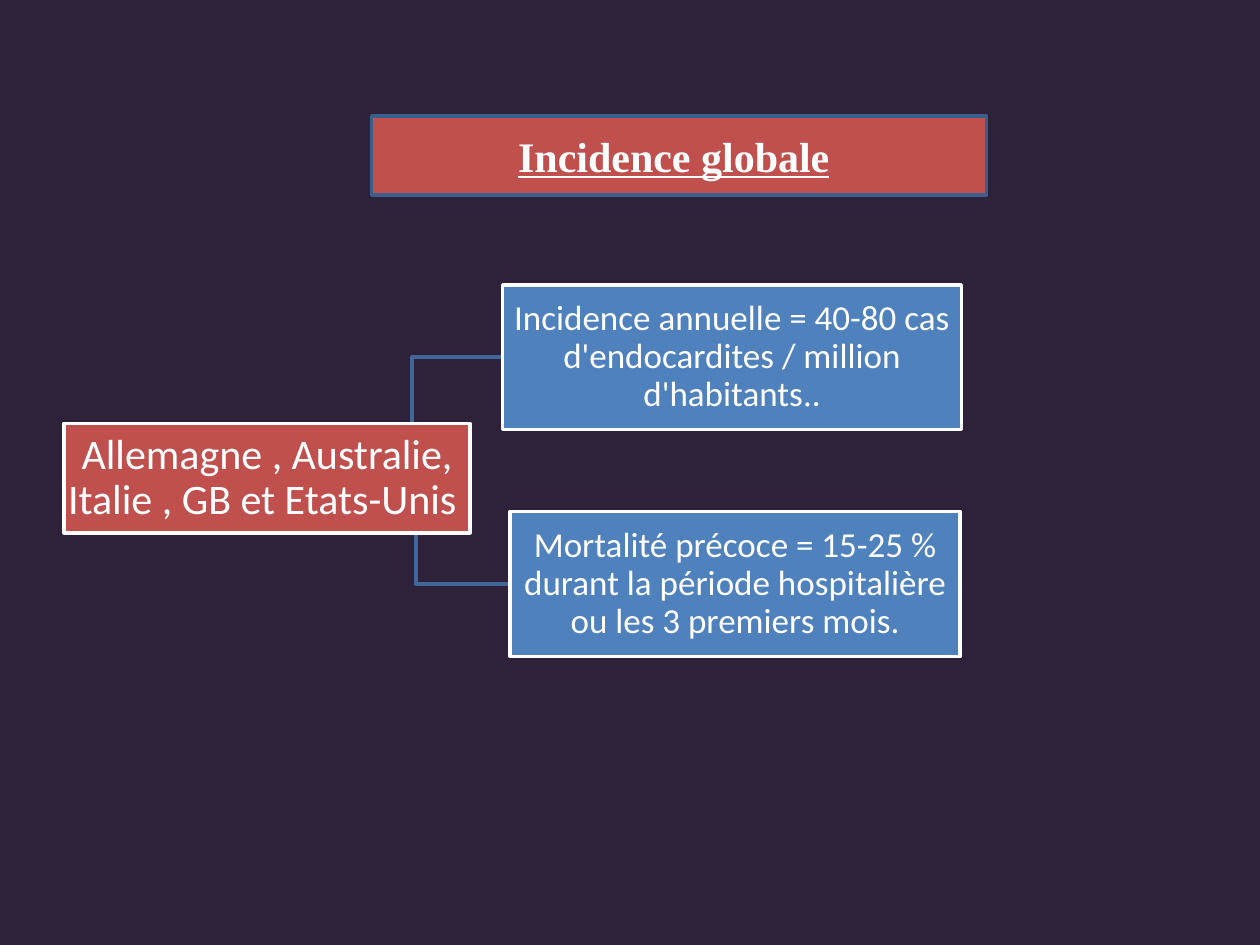
from pptx import Presentation
from pptx import util as u
from pptx.dml.color import RGBColor
from pptx.enum import shapes, text
from pptx.oxml import parse_xml
from pptx.oxml.ns import nsdecls

BACKGROUND = RGBColor(0x2D, 0x22, 0x3A)
RED = RGBColor(0xC0, 0x50, 0x4D)
BLUE = RGBColor(0x4F, 0x81, 0xBD)
BRANCH_BLUE = RGBColor(0x3F, 0x67, 0x97)
OUTLINE_BLUE = RGBColor(0x3A, 0x5F, 0x8C)
WHITE = RGBColor(0xFF, 0xFF, 0xFF)


class Diagram:
    """Holds the style and the current slide."""

    body_font = "Calibri"
    title_font = "Times New Roman"
    line_width = u.Pt(2)

    def __init__(self, slide):
        self.slide = slide
        slide.background.fill.solid()
        slide.background.fill.fore_color.rgb = BACKGROUND

    def paint(self, shape, fill, line):
        shape.fill.solid()
        shape.fill.fore_color.rgb = fill
        shape.line.color.rgb = line
        shape.line.width = self.line_width

    def add_label(self, shape, runs, size):
        """Fill the shape with centred white text; runs are (text, font) pairs."""
        frame = shape.text_frame
        frame.word_wrap = True
        frame.auto_size = text.MSO_AUTO_SIZE.NONE
        frame.vertical_anchor = text.MSO_ANCHOR.MIDDLE
        paragraph = frame.paragraphs[0]
        paragraph.alignment = text.PP_ALIGN.CENTER
        for words, font in runs:
            run = paragraph.add_run()
            run.text = words
            run.font.name = font
            run.font.size = u.Pt(size)
            run.font.color.rgb = WHITE
        return paragraph

    def title(self, words, left, top, width, height):
        """Turn the title placeholder into an ellipse with underlined words."""
        shape = self.slide.shapes.title
        shape.left, shape.top = u.Inches(left), u.Inches(top)
        shape.width, shape.height = u.Inches(width), u.Inches(height)
        shape.element.spPr.append(parse_xml(
            f'<a:prstGeom {nsdecls("a")} prst="ellipse"><a:avLst/></a:prstGeom>'))
        self.paint(shape, RED, OUTLINE_BLUE)
        runs = [(words, self.title_font), (" ", self.title_font)]
        paragraph = self.add_label(shape, runs, 24)
        for run in paragraph.runs:
            run.font.bold = True
        paragraph.runs[0].font.underline = True

    def box(self, runs, left, top, width, height, fill, size, inset):
        shape = self.slide.shapes.add_shape(
            shapes.MSO_SHAPE.RECTANGLE, u.Inches(left), u.Inches(top),
            u.Inches(width), u.Inches(height))
        shape.shadow.inherit = False
        self.paint(shape, fill, WHITE)
        frame = shape.text_frame
        frame.margin_left = frame.margin_right = u.Inches(inset)
        frame.margin_top = frame.margin_bottom = u.Inches(inset)
        self.add_label(shape, runs, size).line_spacing = 0.9

    def branch(self, start_x, start_y, end_x, end_y):
        """Draw an elbow that bends halfway between its ends."""
        middle_x = (start_x + end_x) / 2
        builder = self.slide.shapes.build_freeform(
            u.Inches(start_x), u.Inches(start_y))
        corners = [(middle_x, start_y), (middle_x, end_y), (end_x, end_y)]
        builder.add_line_segments(
            [(u.Inches(x), u.Inches(y)) for x, y in corners], close=False)
        shape = builder.convert_to_shape()
        shape.shadow.inherit = False
        shape.fill.background()
        shape.line.color.rgb = BRANCH_BLUE
        shape.line.width = self.line_width


def main():
    presentation = Presentation()
    presentation.slide_width = u.Inches(10)
    presentation.slide_height = u.Inches(7.5)
    diagram = Diagram(presentation.slides.add_slide(presentation.slide_layouts[5]))
    body, serif = diagram.body_font, diagram.title_font

    # Title
    diagram.title("Incidence globale", 2.95, 0.92, 4.88, 0.63)

    # Findings: runs, left, top, width
    finding_height = 1.15
    findings = [
        ([("Incidence annuelle = 40-80 cas d'endocardites / million d'habitants", body),
          (".", serif), (".", body)], 3.99, 2.26, 3.64),
        ([("Mortalité précoce = 15-25 % durant la période hospitalière "
           "ou les 3 premiers mois.", body)], 4.05, 4.06, 3.57),
    ]

    # Branches lie behind the boxes
    for runs, left, top, width in findings:
        diagram.branch(2.55, 3.79, left, top + finding_height / 2)

    # Countries and their findings
    diagram.box([("Allemagne , Australie, Italie , GB et Etats-Unis ", body)],
                0.51, 3.36, 3.22, 0.87, RED, 24, 0.02)
    for runs, left, top, width in findings:
        diagram.box(runs, left, top, width, finding_height, BLUE, 20, 0.01)

    presentation.save("out.pptx")


if __name__ == "__main__":
    main()
